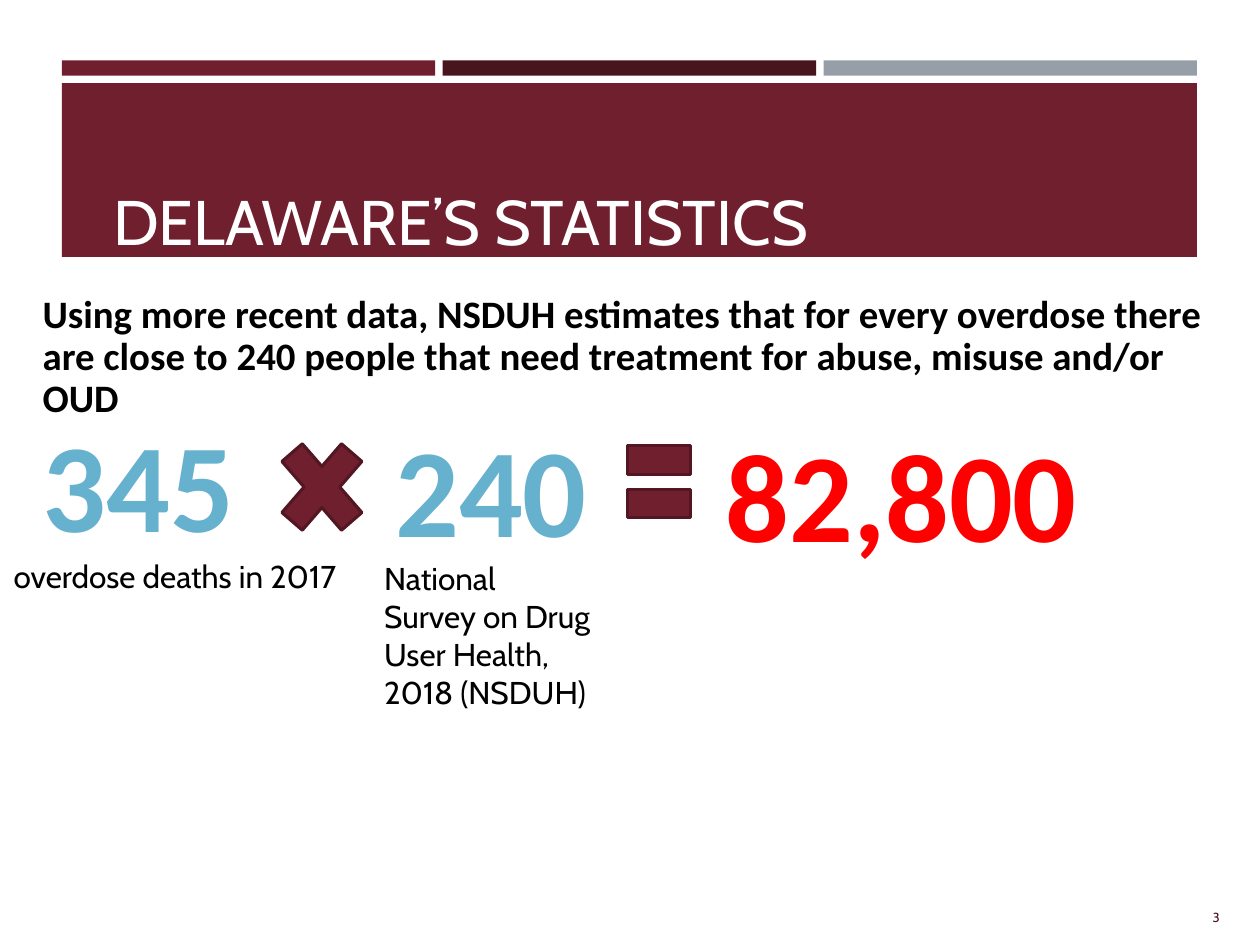
import pptx
import pptx.util
import pptx.dml.color
import pptx.enum.shapes
import pptx.enum.text

# Grid of 100 columns by 75 rows; boxes are (left, top, width, height) in cells.
COLS, ROWS = 100, 75
WIDE, HIGH = pptx.util.Inches(10), pptx.util.Inches(7.5)
HUES = {"wine": "6F1F2E", "dark": "48141E", "gray": "969FA7", "edge": "521722",
        "blue": "66B1CE", "red": "FF0000", "black": "000000", "white": "FFFFFF"}
KINDS = pptx.enum.shapes.MSO_SHAPE
ALIGN = pptx.enum.text.PP_ALIGN
ANCHOR = pptx.enum.text.MSO_ANCHOR


def color(name):
    return pptx.dml.color.RGBColor.from_string(HUES[name])


def place(box):
    """Turn a box in grid cells into slide lengths."""
    left, top, width, height = box
    return (round(left * WIDE / COLS), round(top * HIGH / ROWS),
            round(width * WIDE / COLS), round(height * HIGH / ROWS))


def inset(box, left, top, width, height):
    """Shift a part given from the corner of its region."""
    return box[0] + left, box[1] + top, width, height


def add_text(slide, box, text, size=18, font="Cabin", hue="black", bold=False,
             align=ALIGN.LEFT, anchor=ANCHOR.TOP, line=None, after=None):
    frame = slide.shapes.add_textbox(*place(box)).text_frame
    frame.word_wrap = True
    frame.vertical_anchor = anchor
    para = frame.paragraphs[0]
    para.alignment = align
    if line:
        para.line_spacing = line
    if after:
        para.space_after = pptx.util.Pt(after)
    run = para.add_run()
    run.text = text
    run.font.size = pptx.util.Pt(size)
    run.font.name = font
    run.font.bold = bold
    run.font.color.rgb = color(hue)


def add_shape(slide, kind, box, fill, edge=None):
    shape = slide.shapes.add_shape(kind, *place(box))
    shape.shadow.inherit = False
    shape.fill.solid()
    shape.fill.fore_color.rgb = color(fill)
    if edge:
        shape.line.color.rgb = color(edge)
        shape.line.width = pptx.util.Pt(1.75)
    else:
        shape.line.fill.background()


def add_header(slide, box, title):
    """Three strips above a banner that holds the title."""
    gap, strip = 0.6, 1.2
    width = (box[2] - 2 * gap) / 3
    for i, hue in enumerate(("wine", "dark", "gray")):
        part = inset(box, i * (width + gap), 0, width, strip)
        add_shape(slide, KINDS.RECTANGLE, part, hue)
    top = strip + gap
    banner = inset(box, 0, top, box[2], box[3] - top)
    add_shape(slide, KINDS.RECTANGLE, banner, "wine")
    add_text(slide, inset(box, 3.1, 4.4, 87.4, 11.8), title,
             size=36, hue="white", anchor=ANCHOR.BOTTOM)


def add_sum(slide, box):
    """Deaths times people in need gives the total, with captions below."""
    figures = (("345", 2.3, 0, 27.6, "blue"),
               ("240", 30.3, 0.4, 19.6, "blue"),
               ("82,800", 56.5, 0.8, 41.2, "red"))
    for text, left, top, width, hue in figures:
        add_text(slide, inset(box, left, top, width, 13.1), text,
                 size=72, font="Calibri", hue=hue, bold=True)

    signs = ((KINDS.MATH_MULTIPLY, 20.9, 9.1, 10.5),
             (KINDS.MATH_EQUAL, 48.8, 6.8, 9.7))
    for kind, left, width, height in signs:
        add_shape(slide, kind, inset(box, left, 1.6, width, height),
                  "wine", "edge")

    notes = (("overdose deaths in 2017", 0, 11.9, 27.7, 7.1),
             ("National Survey on Drug User Health, 2018 (NSDUH)",
              29.4, 12.1, 18.5, 13.1))
    for text, *part in notes:
        add_text(slide, inset(box, *part), text)


def main():
    deck = pptx.Presentation()
    deck.slide_width, deck.slide_height = WIDE, HIGH
    slide = deck.slides.add_slide(deck.slide_layouts[6])
    add_header(slide, (4.9, 4.8, 90.1, 15.6), "DELAWARE’S STATISTICS")
    add_text(slide, (2.4, 22.9, 97.6, 9.7),
             "Using more recent data, NSDUH estimates that for every overdose "
             "there are close to 240 people that need treatment for abuse, "
             "misuse and/or OUD",
             size=22.2, font="Calibri", bold=True, line=0.9, after=3.4)
    add_sum(slide, (0.1, 31.8, 97.7, 25.2))
    add_text(slide, (89.4, 70.8, 8.4, 4), "3", size=7.5, hue="dark",
             align=ALIGN.RIGHT, anchor=ANCHOR.MIDDLE)
    deck.save("out.pptx")


if __name__ == "__main__":
    main()
